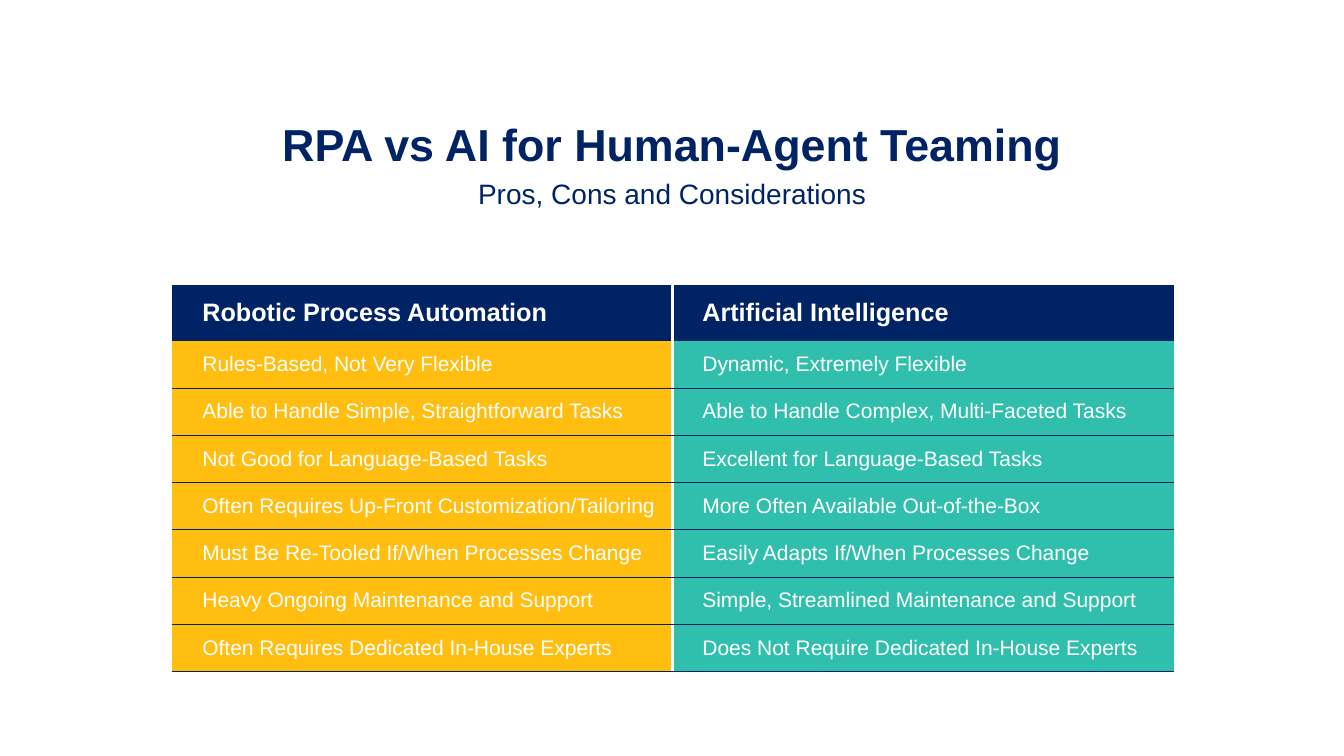
from dataclasses import dataclass
from typing import Optional

from lxml.etree import SubElement
from pptx import Presentation
from pptx.dml.color import RGBColor
from pptx.enum.text import MSO_ANCHOR, MSO_AUTO_SIZE, PP_ALIGN
from pptx.oxml.ns import qn
from pptx.slide import Slide
from pptx.table import _Cell
from pptx.text.text import TextFrame
from pptx.util import Cm, Pt


@dataclass(frozen=True)
class Theme:
    font: str = "Arial"
    navy: str = "002366"
    white: str = "FFFFFF"
    amber: str = "FFBE10"
    teal: str = "31BFAD"
    title_size: int = 32
    subtitle_size: int = 20
    header_size: int = 18
    body_size: int = 15


@dataclass(frozen=True)
class Border:
    color: str
    width: float


@dataclass(frozen=True)
class Column:
    header: str
    fill: str
    width: float
    points: tuple[str, ...]


THEME = Theme()
DIVIDER = Border(THEME.white, 2.25)
RULE = Border(THEME.navy, 0.75)
HEADER_HEIGHT, ROW_HEIGHT = 1.4, 1.19
HEADING_LEFT, HEADING_WIDTH = 1.98, 29.92

COLUMNS = (
    Column("Robotic Process Automation", THEME.amber, 12.6, (
        "Rules-Based, Not Very Flexible",
        "Able to Handle Simple, Straightforward Tasks",
        "Not Good for Language-Based Tasks",
        "Often Requires Up-Front Customization/Tailoring",
        "Must Be Re-Tooled If/When Processes Change",
        "Heavy Ongoing Maintenance and Support",
        "Often Requires Dedicated In-House Experts",
    )),
    Column("Artificial Intelligence", THEME.teal, 12.65, (
        "Dynamic, Extremely Flexible",
        "Able to Handle Complex, Multi-Faceted Tasks",
        "Excellent for Language-Based Tasks",
        "More Often Available Out-of-the-Box",
        "Easily Adapts If/When Processes Change",
        "Simple, Streamlined Maintenance and Support",
        "Does Not Require Dedicated In-House Experts",
    )),
)


def write_text(frame: TextFrame, text: str, *, size: int, color: str,
               bold: bool = False, align: PP_ALIGN = PP_ALIGN.LEFT) -> None:
    paragraph = frame.paragraphs[0]
    paragraph.alignment = align
    run = paragraph.add_run()
    run.text = text
    run.font.name = THEME.font
    run.font.size = Pt(size)
    run.font.bold = bold
    run.font.color.rgb = RGBColor.from_string(color)


def draw_heading(shape, text: str, *, top: float, height: float,
                 size: int, bold: bool) -> None:
    shape.left, shape.top = Cm(HEADING_LEFT), Cm(top)
    shape.width, shape.height = Cm(HEADING_WIDTH), Cm(height)
    frame = shape.text_frame
    frame.word_wrap = True
    frame.auto_size = MSO_AUTO_SIZE.SHAPE_TO_FIT_TEXT
    frame.vertical_anchor = MSO_ANCHOR.TOP
    frame.margin_left = frame.margin_right = 0
    frame.margin_top = frame.margin_bottom = 0
    write_text(frame, text, size=size, color=THEME.navy, bold=bold,
               align=PP_ALIGN.CENTER)


def set_borders(cell: _Cell, borders: dict[str, Optional[Border]]) -> None:
    properties = cell._tc.get_or_add_tcPr()
    for side, border in borders.items():
        line = SubElement(properties, qn(f"a:ln{side}"))
        if border is None:
            line.set("w", "0")
            SubElement(line, qn("a:noFill"))
        else:
            line.set("w", str(Pt(border.width)))
            fill = SubElement(line, qn("a:solidFill"))
            SubElement(fill, qn("a:srgbClr")).set("val", border.color)


def draw_cell(cell: _Cell, text: str, column: Column, *,
              row: int, first_column: bool) -> None:
    is_header = row == 0
    set_borders(cell, {
        "L": None if first_column else DIVIDER,
        "R": DIVIDER if first_column else None,
        "T": RULE if row > 1 else None,
        "B": None if is_header else RULE,
    })
    cell.fill.solid()
    cell.fill.fore_color.rgb = RGBColor.from_string(
        THEME.navy if is_header else column.fill)
    cell.vertical_anchor = MSO_ANCHOR.MIDDLE
    cell.margin_left = Cm(0.76)
    write_text(cell.text_frame, text, color=THEME.white, bold=is_header,
               size=THEME.header_size if is_header else THEME.body_size)


def draw_comparison(slide: Slide, columns: tuple[Column, ...]) -> None:
    point_count = len(columns[0].points)
    table = slide.shapes.add_table(
        point_count + 1, len(columns), Cm(4.34), Cm(7.19),
        Cm(sum(column.width for column in columns)),
        Cm(HEADER_HEIGHT + point_count * ROW_HEIGHT)).table
    table.horz_banding = False
    for row, table_row in enumerate(table.rows):
        table_row.height = Cm(ROW_HEIGHT if row else HEADER_HEIGHT)
    for index, column in enumerate(columns):
        table.columns[index].width = Cm(column.width)
        for row, text in enumerate((column.header, *column.points)):
            draw_cell(table.cell(row, index), text, column,
                      row=row, first_column=index == 0)


def main() -> None:
    presentation = Presentation()
    presentation.slide_width, presentation.slide_height = Cm(33.87), Cm(19.05)
    slide = presentation.slides.add_slide(presentation.slide_layouts[5])

    # Title and subtitle
    draw_heading(slide.shapes.title, "RPA vs AI for Human-Agent Teaming",
                 top=2.95, height=1.37, size=THEME.title_size, bold=True)
    subtitle = slide.shapes.add_textbox(0, 0, Cm(1), Cm(1))
    draw_heading(subtitle, "Pros, Cons and Considerations",
                 top=4.45, height=0.86, size=THEME.subtitle_size, bold=False)

    # Comparison table
    draw_comparison(slide, COLUMNS)

    presentation.save("out.pptx")


if __name__ == "__main__":
    main()
